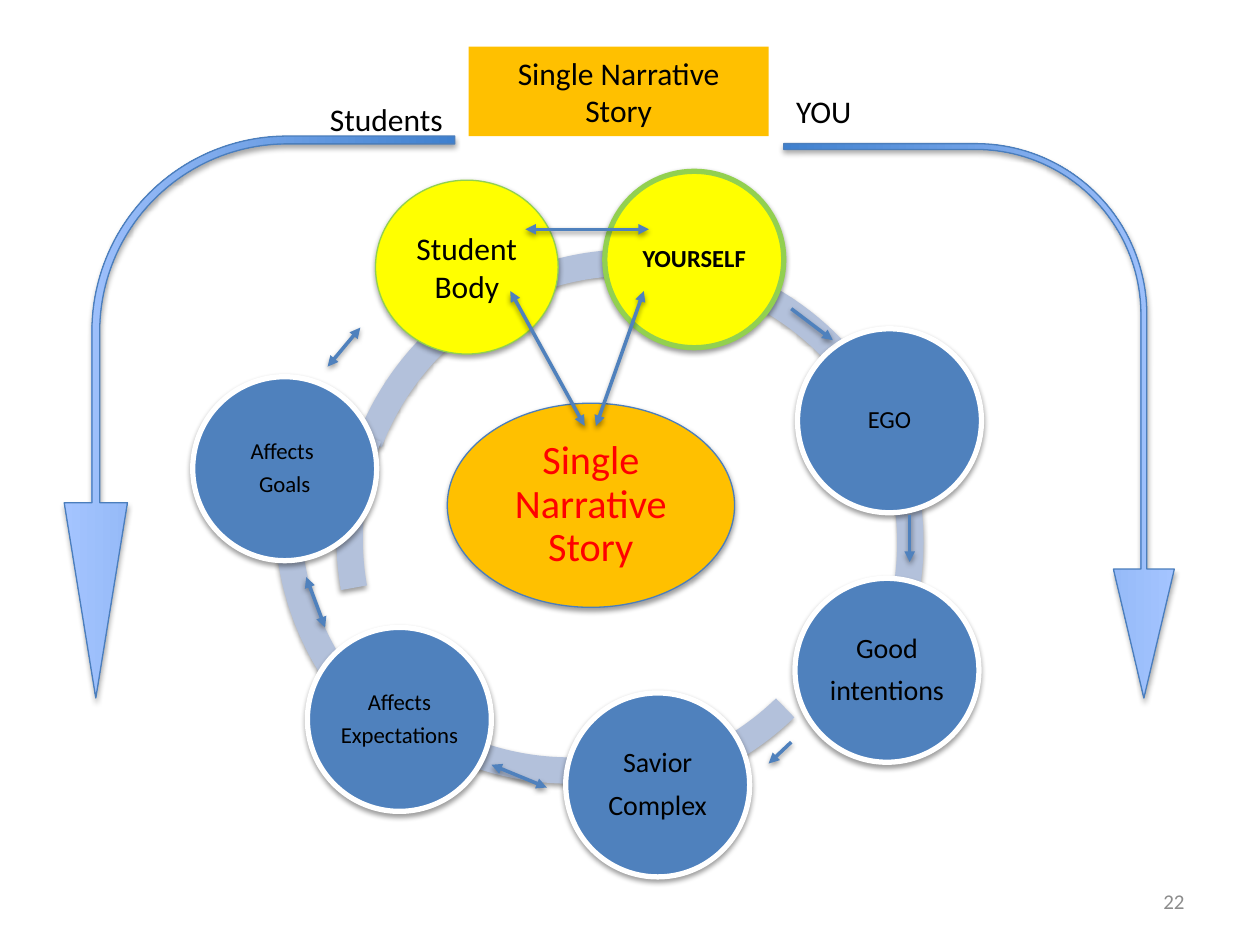
from dataclasses import dataclass

from lxml.etree import SubElement
from pptx import Presentation
from pptx.dml.color import RGBColor
from pptx.enum.shapes import MSO_CONNECTOR, MSO_SHAPE
from pptx.enum.text import MSO_ANCHOR, MSO_AUTO_SIZE, PP_ALIGN
from pptx.oxml.ns import qn
from pptx.util import Inches, Pt


@dataclass(frozen=True)
class Theme:
    """Colours, font and type sizes of the slide."""
    font: str = "Calibri"
    blue: str = "4F81BD"
    edge: str = "4B7EBC"
    deep: str = "3F80CE"
    pale: str = "A4C4FF"
    band: str = "B3C1DB"
    gold: str = "FFC000"
    sun: str = "FFFF00"
    leaf: str = "92D050"
    red: str = "FF0000"
    gray: str = "8C8C8C"
    white: str = "FFFFFF"
    black: str = "000000"
    core: int = 23
    head: int = 18
    large: int = 16
    mid: int = 14
    small: int = 13
    foot: int = 12


T = Theme()
COLS, ROWS = 100, 75
RING = 46.5
DISC = 14.6

ARCS = [
    (21.8, 17.8, 113.78, 177.82),
    (22, 15.7, 76.05, 110.58),
    (23.6, 17, 45.86, 79.16),
    (28.9, 16.3, 22.04, 53.96),
    (26.8, 19.8, 200.93, 15.92),
    (26.7, 19.5, 169.89, 201.32),
]
STEPS = [
    (63.3, 26.1, ["EGO"], T.mid),
    (63.1, 45.9, ["Good", "intentions"], T.large),
    (44.9, 55, ["Savior", "Complex"], T.large),
    (24.4, 49.8, ["Affects", "Expectations"], T.small),
    (15.3, 29.9, ["Affects ", "Goals"], T.small),
]
BENDS = [
    ((55.7, 17.9, 44, 31), (0.015, 0.078, 0.33, 0.438), False),
    ((-1.7, 17.6, 44.6, 31), (0.02, 0.081, 0.5, 0.5), True),
]
LINKS = [
    (28.6, 26, 26, 29.1, True),
    (41.7, 18.2, 51.5, 18.2, True),
    (51.1, 23.1, 47.3, 33.8, True),
    (62.8, 24.5, 66.1, 27, False),
    (72.2, 40.9, 72.2, 44.6, False),
    (62.8, 58.9, 61, 60.6, False),
    (40.5, 23.1, 46.4, 33.8, True),
    (24.3, 45.8, 25.8, 49.8, True),
    (39, 60.7, 43.4, 62.5, True),
]


def grid(*cells):
    """Turn grid cells into slide lengths."""
    return [Inches(cell / 10) for cell in cells]


def tint(name):
    """Turn a hex name into a colour."""
    return RGBColor.from_string(name)


def shade(item, alpha=38, dist=1.6):
    """Give an item a soft shadow straight below it."""
    group = SubElement(item.element.spPr, qn("a:effectLst"))
    drop = SubElement(group, qn("a:outerShdw"), blurRad=str(Pt(3.1)),
                      dist=str(Pt(dist)), dir="5400000", rotWithShape="0")
    ink = SubElement(drop, qn("a:srgbClr"), val=T.black)
    SubElement(ink, qn("a:alpha"), val=str(alpha * 1000))


def write(item, lines, size, color=T.black, bold=False,
          align=PP_ALIGN.CENTER, inset=None, tight=False):
    """Write lines into an item and format their runs."""
    frame = item.text_frame
    frame.text = "\n".join(lines)
    frame.word_wrap = True
    frame.vertical_anchor = MSO_ANCHOR.MIDDLE
    if inset is not None:
        frame.margin_left = frame.margin_right = Inches(inset)
        frame.margin_top = frame.margin_bottom = Inches(inset)
    for para in frame.paragraphs:
        para.alignment = align
        if tight:
            para.line_spacing = 0.9
            para.space_after = Pt(round(size * 0.42))
        for run in para.runs:
            run.font.name = T.font
            run.font.size = Pt(size)
            run.font.bold = bold
            run.font.color.rgb = tint(color)


def form(slide, kind, box, fill, line=None, width=0.75):
    """Add a filled preset shape with an optional outline."""
    shape = slide.shapes.add_shape(kind, *grid(*box))
    shape.fill.solid()
    shape.fill.fore_color.rgb = tint(fill)
    if line:
        shape.line.color.rgb = tint(line)
        shape.line.width = Pt(width)
    else:
        shape.line.fill.background()
    return shape


def arc(slide, left, top, start, end):
    """Add one band of the ring, from start to end degrees."""
    shape = form(slide, MSO_SHAPE.BLOCK_ARC, (left, top, RING, RING), T.band)
    for spot, value in enumerate((start * 0.6, end * 0.6, 0.045)):
        shape.adjustments[spot] = value
    shade(shape)


def disc(slide, box, lines, size, fill, line, width, color=T.black,
         bold=False, inset=0.02, tight=True):
    """Add an ellipse with its words."""
    shape = form(slide, MSO_SHAPE.OVAL, box, fill, line, width)
    shade(shape)
    write(shape, lines, size, color, bold, inset=inset, tight=tight)


def bend(slide, box, ratios, flip):
    """Add a bent arrow that points down."""
    shape = form(slide, MSO_SHAPE.BENT_ARROW, box, T.pale, T.edge)
    shape.rotation = 90
    if flip:
        shape.element.spPr.find(qn("a:xfrm")).set("flipV", "1")
    for spot, value in enumerate(ratios):
        shape.adjustments[spot] = value
    shape.fill.gradient()
    shape.fill.gradient_angle = 90
    for stop, name in zip(shape.fill.gradient_stops, (T.deep, T.pale)):
        stop.color.rgb = tint(name)
    shade(shape, 35, 1.8)


def link(slide, *ends, both):
    """Add an arrow with one head or two."""
    item = slide.shapes.add_connector(MSO_CONNECTOR.STRAIGHT, *grid(*ends))
    item.line.color.rgb = tint(T.blue)
    item.line.width = Pt(2)
    stroke = item.element.spPr.find(qn("a:ln"))
    for tip in ("a:headEnd", "a:tailEnd") if both else ("a:tailEnd",):
        SubElement(stroke, qn(tip), type="triangle")
    shade(item)


def label(slide, box, text, size=T.head, color=T.black,
          align=PP_ALIGN.LEFT, wrap=False):
    """Add a plain line of text."""
    item = slide.shapes.add_textbox(*grid(*box))
    write(item, [text], size, color, align=align)
    item.text_frame.word_wrap = wrap


def head(slide, box, text):
    """Move and format the title."""
    title = slide.shapes.title
    title.left, title.top, title.width, title.height = grid(*box)
    title.fill.solid()
    title.fill.fore_color.rgb = tint(T.gold)
    write(title, [text], T.head)
    title.text_frame.auto_size = MSO_AUTO_SIZE.NONE


def main():
    """Build the slide and save it."""
    deck = Presentation()
    deck.slide_width, deck.slide_height = grid(COLS, ROWS)
    slide = deck.slides.add_slide(deck.slide_layouts[5])
    head(slide, (37.2, 3.7, 23.8, 7.1), "Single Narrative Story")
    for row in ARCS:
        arc(slide, *row)
    disc(slide, (35.5, 32, 22.8, 16.2), ["Single Narrative Story"], T.core,
         T.gold, T.edge, 0.75, T.red, inset=0.03)
    disc(slide, (48, 13.6, 14.2, 14), ["YOURSELF"], T.mid,
         T.sun, T.leaf, 3, bold=True)
    for left, top, lines, size in STEPS:
        disc(slide, (left, top, DISC, DISC), lines, size, T.blue, T.white, 3)
    disc(slide, (29.8, 14.3, 14.5, 13.8), ["Student", "Body"], T.head,
         T.sun, T.leaf, 0.75, tight=False)
    for row in BENDS:
        bend(slide, *row)
    label(slide, (62.2, 6.8, 6.4, 4), "YOU")
    label(slide, (25.2, 7.4, 11.1, 4), "Students")
    for *ends, both in LINKS:
        link(slide, *ends, both=both)
    label(slide, (71.7, 69.5, 23.3, 4), "22", T.foot, T.gray,
          PP_ALIGN.RIGHT, True)
    deck.save("out.pptx")


if __name__ == "__main__":
    main()
